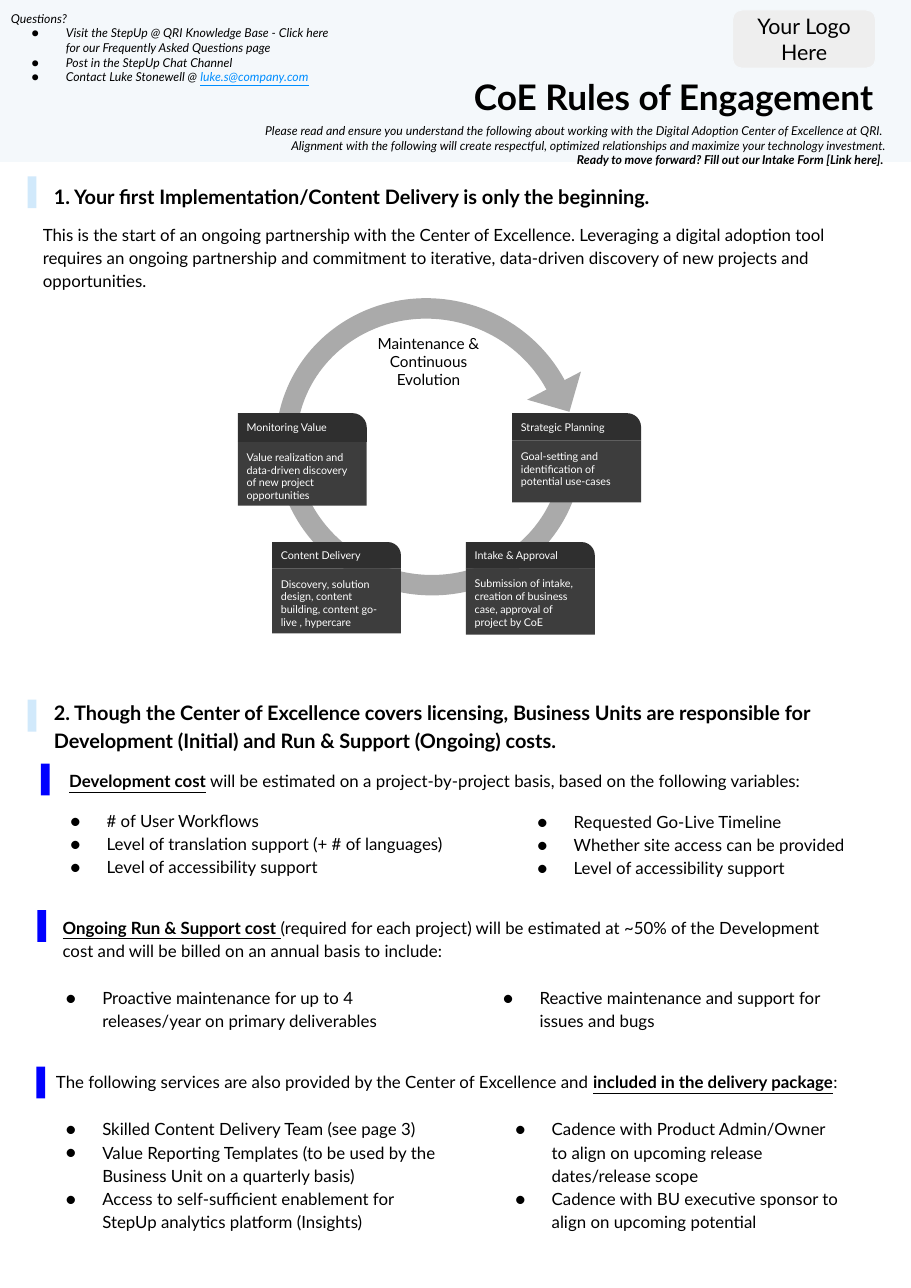
import pptx
import pptx.dml.color
import pptx.enum.shapes
import pptx.enum.text
import pptx.oxml
import pptx.oxml.ns
import pptx.util
from dataclasses import dataclass

Inches = pptx.util.Inches
Pt = pptx.util.Pt
SHAPE = pptx.enum.shapes.MSO_SHAPE
ALIGN = pptx.enum.text.PP_ALIGN
ANCHOR = pptx.enum.text.MSO_ANCHOR


@dataclass(frozen=True)
class Theme:
    font: str = "Lato"
    ink: str = "000000"
    paper: str = "FFFFFF"
    band: str = "F4F8FB"
    logo: str = "EEEEEE"
    section: str = "D1E9FB"
    topic: str = "0000FF"
    link: str = "008EFF"
    cycle: str = "AAAAAA"
    card_head: str = "2F2F2F"
    card_body: str = "3D3D3D"
    title: int = 23
    logo_text: int = 14
    heading: int = 13
    body: int = 11
    label: int = 10
    small: int = 8
    card: int = 7


THEME = Theme()
BOLD = {"bold": True}
KEY = {"bold": True, "underline": True}
LINK = {"underline": True, "color": THEME.link}

# A paragraph is a string, or a list of (text, format) runs.
TITLE = "CoE Rules of Engagement"
LOGO = "Your Logo Here"
INTRO = [
    "Please read and ensure you understand the following about working with the "
    "Digital Adoption Center of Excellence at QRI. ",
    "Alignment with the following will create respectful, optimized relationships "
    "and maximize your technology investment.",
    [("Ready to move forward? Fill out our Intake Form [Link here]. ", BOLD)],
]
QUESTIONS = "Questions?"
CONTACTS = [
    "Visit the StepUp @ QRI Knowledge Base - Click here for our Frequently Asked Questions page",
    "Post in the StepUp Chat Channel",
    [("Contact Luke Stonewell @ ", {}), ("luke.s@company.com", LINK)],
]

# top of bar, top of text, text height, text
SECTIONS = [
    (1.6, 1.54, 0.42, "1. Your first Implementation/Content Delivery is only the beginning."),
    (6.35, 6.23, 0.67, "2. Though the Center of Excellence covers licensing, Business Units are "
     "responsible for Development (Initial) and Run & Support (Ongoing) costs."),
]
PARTNERSHIP = (
    "This is the start of an ongoing partnership with the Center of Excellence. Leveraging a "
    "digital adoption tool requires an ongoing partnership and commitment to iterative, "
    "data-driven discovery of new projects and opportunities."
)
CYCLE_LABEL = "Maintenance & Continuous Evolution"
CARD_WIDTH = 1.17
# left, top, head height, body height, head, body
CARDS = [
    (2.16, 3.75, 0.26, 0.58, "Monitoring Value",
     "Value realization and data-driven discovery of new project opportunities"),
    (4.23, 4.92, 0.24, 0.6, "Intake & Approval",
     "Submission of intake, creation of business case, approval of project by CoE"),
    (2.47, 4.92, 0.24, 0.59, "Content Delivery",
     "Discovery, solution design, content building, content go-live , hypercare"),
    (4.65, 3.75, 0.25, 0.56, "Strategic Planning",
     "Goal-setting and identification of potential use-cases"),
]
# bar left, bar top, text box, runs
TOPICS = [
    (0.37, 6.93, (0.53, 6.87, 7.13, 0.39),
     [("Development cost", KEY),
      (" will be estimated on a project-by-project basis, based on the following variables:", {})]),
    (0.34, 8.26, (0.47, 8.2, 7.13, 0.6),
     [("Ongoing Run & Support cost ", KEY),
      ("(required for each project) will be estimated at ~50% of the Development cost and "
       "will be billed on an annual basis to include:", {})]),
    (0.33, 9.68, (0.41, 9.6, 7.65, 0.39),
     [("The following services are also provided by the Center of Excellence and ", {}),
      ("included in the delivery package", KEY), (":", {})]),
]
# text box, items
LISTS = [
    ((0.37, 7.23, 4.2, 0.83),
     ["# of User Workflows", "Level of translation support (+ # of languages)",
      "Level of accessibility support"]),
    ((4.61, 7.24, 3.6, 0.83),
     ["Requested Go-Live Timeline", "Whether site access can be provided",
      "Level of accessibility support"]),
    ((0.33, 8.84, 3.79, 0.6),
     ["Proactive maintenance for up to 4 releases/year on primary deliverables"]),
    ((4.3, 8.84, 3.44, 0.6),
     ["Reactive maintenance and support for issues and bugs"]),
    ((0.33, 10.03, 3.79, 1.45),
     ["Skilled Content Delivery Team (see page 3)",
      "Value Reporting Templates (to be used by the Business Unit on a quarterly basis)",
      "Access to self-sufficient enablement for StepUp analytics platform (Insights)"]),
    ((4.41, 10.03, 3.33, 1.45),
     ["Cadence with Product Admin/Owner to align on upcoming release dates/release scope",
      "Cadence with BU executive sponsor to align on upcoming potential"]),
]


def rgb(value):
    return pptx.dml.color.RGBColor.from_string(value)


def add_bullet(paragraph, hang):
    properties = paragraph._p.get_or_add_pPr()
    properties.set("marL", str(Inches(0.5)))
    properties.set("indent", str(-Inches(hang)))
    namespace = pptx.oxml.ns.nsdecls("a")
    for xml in (f'<a:buClr {namespace}><a:srgbClr val="{THEME.ink}"/></a:buClr>',
                f'<a:buFont {namespace} typeface="{THEME.font}"/>',
                f'<a:buChar {namespace} char="●"/>'):
        properties.append(pptx.oxml.parse_xml(xml))


def write(shape, paragraphs, size, color=THEME.ink, align=ALIGN.LEFT, anchor=ANCHOR.TOP,
          inset=0.1, spacing=None, hang=None, plain_lines=0, **font):
    """Fill a shape with paragraphs; those after plain_lines get bullets if hang is set."""
    frame = shape.text_frame
    layout = {"word_wrap": True, "vertical_anchor": anchor}
    layout.update({f"margin_{side}": Inches(inset) for side in ("left", "top", "right", "bottom")})
    for name, value in layout.items():
        setattr(frame, name, value)
    for index, content in enumerate(paragraphs):
        paragraph = frame.add_paragraph() if index else frame.paragraphs[0]
        paragraph.alignment = align
        if spacing:
            paragraph.line_spacing = spacing
        if hang and index >= plain_lines:
            add_bullet(paragraph, hang)
        for text, extra in [(content, {})] if isinstance(content, str) else content:
            run = paragraph.add_run()
            run.text = text
            values = {"name": THEME.font, "size": Pt(size), "color": color, **font, **extra}
            run.font.color.rgb = rgb(values.pop("color"))
            for name, value in values.items():
                setattr(run.font, name, value)


def add_block(shapes, kind, box, fill, adjustments=(), rotation=0):
    shape = shapes.add_shape(kind, *map(Inches, box))
    shape.shadow.inherit = False
    shape.fill.solid()
    shape.fill.fore_color.rgb = rgb(fill)
    shape.line.fill.background()
    shape.rotation = rotation
    for index, value in enumerate(adjustments):
        shape.adjustments[index] = value
    return shape


def add_text(shapes, box, paragraphs, size, **options):
    write(shapes.add_textbox(*map(Inches, box)), paragraphs, size, **options)


def add_bar(shapes, left, top, fill):
    add_block(shapes, SHAPE.RECTANGLE, (left, top, 0.08, 0.29), fill)


def add_header(shapes):
    add_block(shapes, SHAPE.RECTANGLE, (0, 0, 8.27, 1.47), THEME.band)
    add_text(shapes, (2.41, 0.58, 5.62, 0.59), [TITLE], THEME.title, align=ALIGN.RIGHT, bold=True)
    add_text(shapes, (0.12, 1.02, 8.03, 0.61), INTRO, THEME.small, align=ALIGN.RIGHT, italic=True)
    add_text(shapes, (0, 0, 3.2, 0.88), [QUESTIONS, *CONTACTS], THEME.small,
             hang=0.31, plain_lines=1, italic=True)
    logo = add_block(shapes, SHAPE.ROUNDED_RECTANGLE, (6.65, 0.09, 1.3, 0.53), THEME.logo)
    logo.line.color.rgb = rgb(THEME.band)
    logo.line.width = Pt(0.75)
    write(logo, [LOGO], THEME.logo_text, align=ALIGN.CENTER, anchor=ANCHOR.MIDDLE)


def add_cycle(shapes):
    ring = shapes.add_group_shape().shapes
    add_block(ring, SHAPE.BLOCK_ARC, (2.55, 2.66, 2.69, 2.79), THEME.cycle,
              (53.998, 30.127, 0.069), 286)
    add_block(ring, SHAPE.RIGHT_TRIANGLE, (4.84, 3.3, 0.38, 0.4), THEME.cycle, rotation=286)
    for left, top, head_height, body_height, head, body in CARDS:
        card = shapes.add_group_shape().shapes
        body_box = (left, top + head_height, CARD_WIDTH, body_height)
        write(add_block(card, SHAPE.RECTANGLE, body_box, THEME.card_body),
              [body], THEME.card, THEME.paper, inset=0.08)
        head_box = (left, top, CARD_WIDTH, head_height)
        write(add_block(card, SHAPE.ROUND_1_RECTANGLE, head_box, THEME.card_head, (0.5,)),
              [head], THEME.card, THEME.paper, anchor=ANCHOR.MIDDLE, inset=0.08)
    add_text(shapes, (3.19, 2.93, 1.4, 0.71), [CYCLE_LABEL], THEME.label, align=ALIGN.CENTER)


def main():
    presentation = pptx.Presentation()
    presentation.slide_width = Inches(8.27)
    presentation.slide_height = Inches(11.69)
    shapes = presentation.slides.add_slide(presentation.slide_layouts[6]).shapes

    add_header(shapes)
    for bar_top, top, height, text in SECTIONS:
        add_bar(shapes, 0.25, bar_top, THEME.section)
        add_text(shapes, (0.39, top, 7.08, height), [text], THEME.heading, spacing=1.15, bold=True)
    add_text(shapes, (0.29, 1.91, 7.82, 0.6), [PARTNERSHIP], THEME.body, spacing=1.15)
    add_cycle(shapes)
    for bar_left, bar_top, box, runs in TOPICS:
        add_bar(shapes, bar_left, bar_top, THEME.topic)
        add_text(shapes, box, [runs], THEME.body, spacing=1.15)
    for box, items in LISTS:
        add_text(shapes, box, items, THEME.body, spacing=1.15, hang=0.33)
    presentation.save("out.pptx")


if __name__ == "__main__":
    main()
